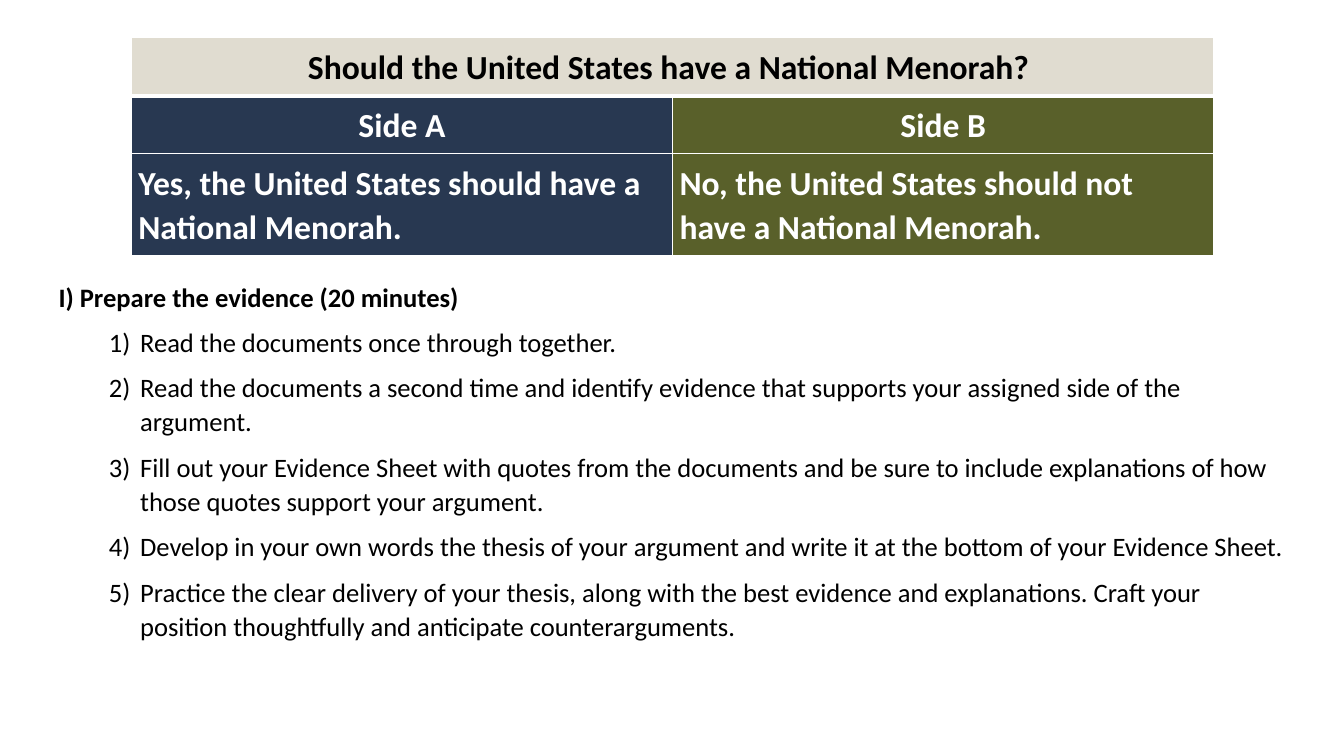
from dataclasses import dataclass
from pptx import Presentation
from pptx.dml.color import RGBColor as RGB
from pptx.enum.text import MSO_ANCHOR as Anchor, PP_ALIGN as Align
from pptx.oxml import parse_xml
from pptx.oxml.ns import nsdecls
from pptx.util import Pt


@dataclass(frozen=True)
class Theme:
    font: str = "Calibri"
    black: str = "000000"
    white: str = "FFFFFF"
    sand: str = "E0DCD0"
    navy: str = "283851"
    olive: str = "59602A"
    big: int = 24
    body: int = 19
    lead: float = 1.07


THEME = Theme()
TITLE = "Should the United States have a National Menorah? "
SIDES = [
    ("Side A", "Yes, the United States should have a National Menorah.", THEME.navy),
    ("Side B", "No, the United States should not have a National Menorah.", THEME.olive),
]
HEAD = "I) Prepare the evidence (20 minutes)"
STEPS = [
    "Read the documents once through together.",
    "Read the documents a second time and identify evidence that supports "
    "your assigned side of the argument.",
    "Fill out your Evidence Sheet with quotes from the documents and be sure "
    "to include explanations of how those quotes support your argument.",
    "Develop in your own words the thesis of your argument and write it at "
    "the bottom of your Evidence Sheet.",
    "Practice the clear delivery of your thesis, along with the best evidence "
    "and explanations. Craft your position thoughtfully and anticipate "
    "counterarguments.",
]


def add_run(para, text, size, color, bold=False):
    para.line_spacing = THEME.lead
    run = para.add_run()
    run.text = text
    font = run.font
    font.name, font.size, font.bold = THEME.font, Pt(size), bold
    font.color.rgb = RGB.from_string(color)


def set_pad(area, side, top):
    area.margin_left = area.margin_right = Pt(side)
    area.margin_top = area.margin_bottom = Pt(top)


def add_edges(cell, top=1, base=1):
    # Borders go ahead of the fill in the cell properties
    props = cell._tc.get_or_add_tcPr()
    edges = {"L": 1, "R": 1, "T": top, "B": base}
    for spot, (side, width) in enumerate(edges.items()):
        props.insert(spot, parse_xml(
            f'<a:ln{side} {nsdecls("a")} w="{Pt(width)}"><a:solidFill>'
            f'<a:srgbClr val="{THEME.white}"/></a:solidFill></a:ln{side}>'))


def fill_cell(cell, text, fill, color, align=Align.LEFT, top=1, base=1):
    cell.fill.solid()
    cell.fill.fore_color.rgb = RGB.from_string(fill)
    set_pad(cell, 5, 5)
    add_edges(cell, top, base)
    if text:
        para = cell.text_frame.paragraphs[0]
        para.alignment = align
        add_run(para, text, THEME.big, color, True)


def add_sides(slide):
    rows = [41.4, 41.4, 72.8]
    frame = slide.shapes.add_table(
        len(rows), len(SIDES), Pt(93.8), Pt(27), Pt(773.2), Pt(sum(rows)))
    table = frame.table
    for row, height in zip(table.rows, rows):
        row.height = Pt(height)

    # Question across the top
    table.cell(0, 0).merge(table.cell(0, 1))
    for col, text in enumerate([TITLE, ""]):
        fill_cell(table.cell(0, col), text, THEME.sand, THEME.black,
                  Align.CENTER, base=3)

    # One column for each side
    for col, (name, claim, fill) in enumerate(SIDES):
        fill_cell(table.cell(1, col), name, fill, THEME.white,
                  Align.CENTER, top=3)
        fill_cell(table.cell(2, col), claim, fill, THEME.white)


def set_number(para):
    props = para._p.get_or_add_pPr()
    props.set("marL", str(Pt(58.3)))
    props.set("indent", str(Pt(-22.3)))
    props.append(parse_xml(
        f'<a:buFont {nsdecls("a")} typeface="+mj-lt"/>'))
    props.append(parse_xml(
        f'<a:buAutoNum {nsdecls("a")} type="arabicParenR"/>'))


def add_steps(slide):
    box = slide.shapes.add_textbox(Pt(32.4), Pt(189.4), Pt(894.2), Pt(293.8))
    frame = box.text_frame
    frame.word_wrap = True
    frame.vertical_anchor = Anchor.TOP
    set_pad(frame, 9.4, 9.4)
    para = frame.paragraphs[0]
    para.space_after = Pt(8)
    add_run(para, HEAD, THEME.body, THEME.black, True)
    for step in STEPS:
        para = frame.add_paragraph()
        para.level = 1
        para.space_after = Pt(8)
        add_run(para, step, THEME.body, THEME.black)
        set_number(para)


def main():
    deck = Presentation()
    deck.slide_width, deck.slide_height = Pt(960), Pt(540)
    slide = deck.slides.add_slide(deck.slide_layouts[6])
    add_steps(slide)
    add_sides(slide)
    deck.save("out.pptx")


if __name__ == "__main__":
    main()
